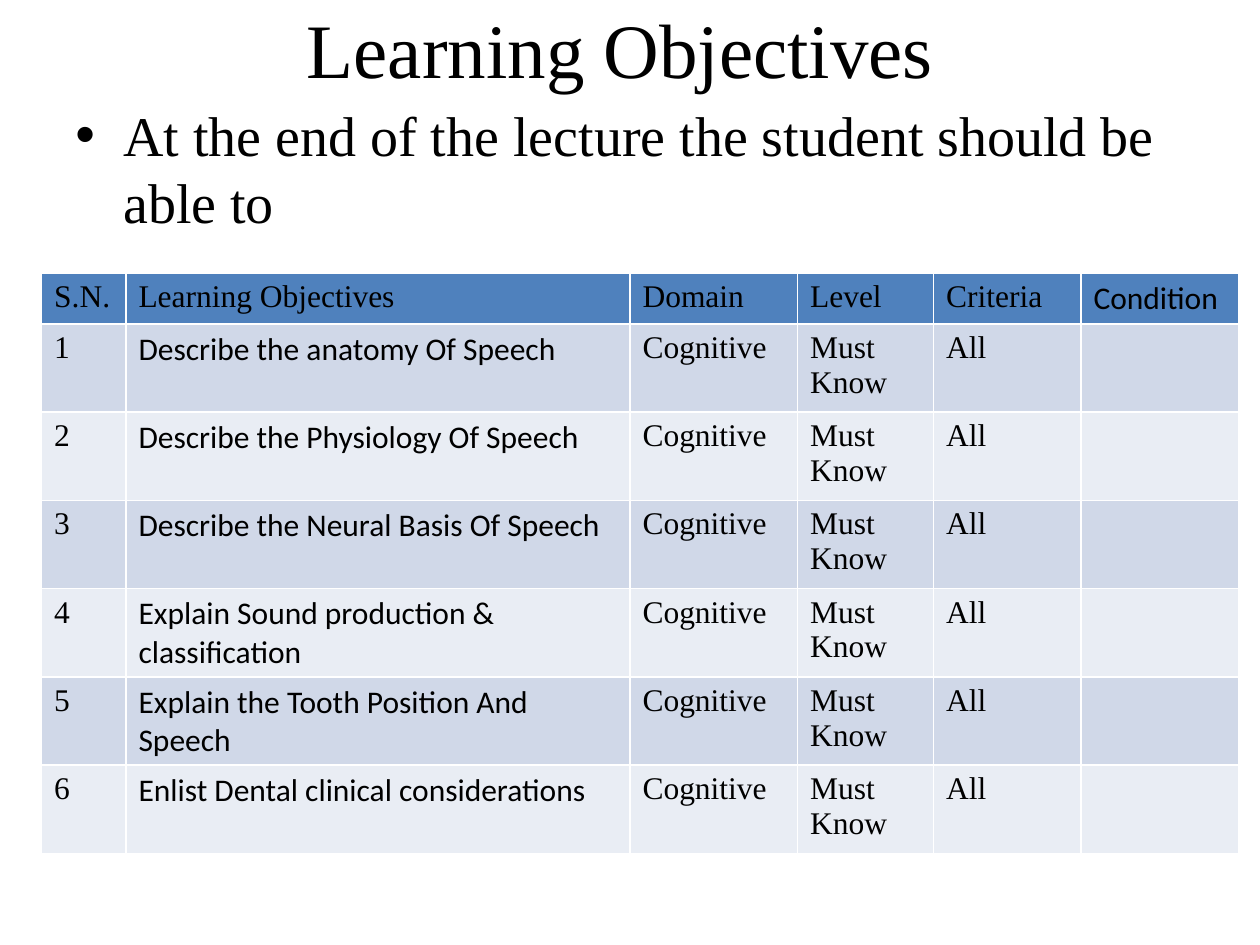
from dataclasses import dataclass

from lxml.etree import SubElement
from pptx import Presentation
from pptx.dml.color import RGBColor
from pptx.enum.text import MSO_ANCHOR, PP_ALIGN
from pptx.oxml.ns import qn
from pptx.util import Inches, Pt

COLORS = {"text": "000000", "header": "4F81BD", "odd": "D0D8E8", "even": "E9EDF4"}
SERIF, SANS = "Times New Roman", "Calibri"
HEADERS = ["S.N.", "Learning Objectives", "Domain", "Level", "Criteria", "Condition"]
OBJECTIVES = [
    "Describe the anatomy Of Speech",
    "Describe the Physiology Of Speech",
    "Describe the Neural Basis Of Speech",
    "Explain Sound production & classification",
    "Explain the Tooth Position And Speech",
    "Enlist Dental clinical considerations",
]
COL_WIDTHS = [0.67, 4, 1.33, 1.08, 1.17, 1.25]
HEADER_HEIGHT, ROW_HEIGHT = 0.33, 0.58


@dataclass
class TextBlock:
    text: str
    left: float
    top: float
    width: float
    height: float
    size: float
    anchor: MSO_ANCHOR = MSO_ANCHOR.TOP
    align: PP_ALIGN = PP_ALIGN.LEFT
    bullet: bool = False


TITLE = TextBlock("Learning Objectives ", 0.5, -0.25, 9, 1.25, 44,
                  MSO_ANCHOR.MIDDLE, PP_ALIGN.CENTER)
INTRO = TextBlock("At the end of the lecture the student should be able to",
                  0.5, 0.75, 9, 1.4, 32, bullet=True)


def format_runs(p, size: float, font: str) -> None:
    for r in p.runs:
        r.font.size = Pt(size)
        r.font.name = font
        r.font.bold = False
        r.font.color.rgb = RGBColor.from_string(COLORS["text"])


def add_bullet(p, indent: float) -> None:
    pPr = p._p.get_or_add_pPr()
    pPr.set("marL", str(Inches(indent)))
    pPr.set("indent", str(-Inches(indent)))
    SubElement(pPr, qn("a:buFont")).set("typeface", "Arial")
    SubElement(pPr, qn("a:buChar")).set("char", "•")


def add_text(s, block: TextBlock) -> None:
    sp = s.shapes.add_textbox(Inches(block.left), Inches(block.top),
                              Inches(block.width), Inches(block.height))
    tf = sp.text_frame
    tf.word_wrap = True
    tf.vertical_anchor = block.anchor
    tf.text = block.text
    p = tf.paragraphs[0]
    p.alignment = block.align
    format_runs(p, block.size, SERIF)
    if block.bullet:
        p.space_before = Pt(block.size * 0.2)
        add_bullet(p, 0.38)


def fill_cell(cell, text: str, font: str, color: str) -> None:
    cell.fill.solid()
    cell.fill.fore_color.rgb = RGBColor.from_string(COLORS[color])
    cell.text_frame.text = text
    format_runs(cell.text_frame.paragraphs[0], 18, font)


def add_objectives_table(s, left: float, top: float) -> None:
    rows = [HEADERS] + [[str(n), objective, "Cognitive", "Must Know", "All", ""]
                        for n, objective in enumerate(OBJECTIVES, 1)]
    heights = [HEADER_HEIGHT] + [ROW_HEIGHT] * len(OBJECTIVES)
    table = s.shapes.add_table(len(rows), len(HEADERS), Inches(left), Inches(top),
                               Inches(sum(COL_WIDTHS)), Inches(sum(heights))).table
    for column, width in zip(table.columns, COL_WIDTHS):
        column.width = Inches(width)
    for i, (row, height) in enumerate(zip(rows, heights)):
        table.rows[i].height = Inches(height)
        color = "header" if i == 0 else "odd" if i % 2 else "even"
        for j, text in enumerate(row):
            sans = text in OBJECTIVES or text == "Condition"
            fill_cell(table.cell(i, j), text, SANS if sans else SERIF, color)


def main() -> None:
    """Build the learning objectives slide."""
    prs = Presentation()
    prs.slide_width, prs.slide_height = Inches(10), Inches(7.5)
    s = prs.slides.add_slide(prs.slide_layouts[6])
    for block in (TITLE, INTRO):
        add_text(s, block)
    add_objectives_table(s, 0.33, 2.17)
    prs.save("out.pptx")


if __name__ == "__main__":
    main()
